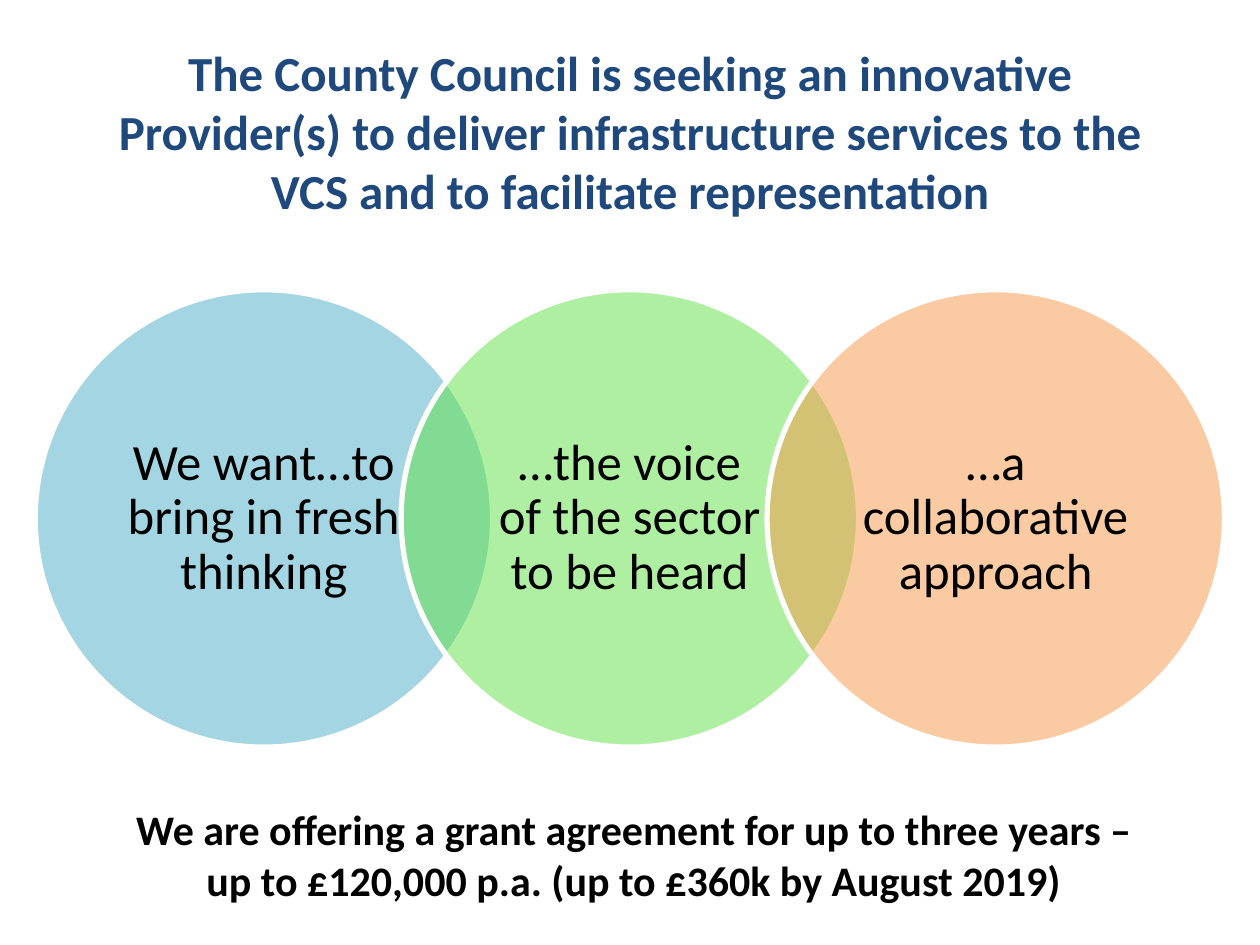
from lxml import etree
from pptx import Presentation
from pptx.dml.color import RGBColor
from pptx.enum.shapes import MSO_SHAPE
from pptx.enum.text import MSO_ANCHOR, MSO_AUTO_SIZE, PP_ALIGN
from pptx.oxml.ns import qn
from pptx.util import Inches, Pt

OVAL = MSO_SHAPE.OVAL
CENTER = PP_ALIGN.CENTER
TOP, MIDDLE = MSO_ANCHOR.TOP, MSO_ANCHOR.MIDDLE
NO_FIT = MSO_AUTO_SIZE.NONE

TITLE = ("The County Council is seeking an innovative Provider(s) to deliver "
         "infrastructure services to the VCS and to facilitate representation")
AIMS = [
    ("We want…to bring in fresh thinking", "4BACC6"),
    ("…the voice of the sector to be heard", "60E146"),
    ("…a collaborative approach", "F79646"),
]
OFFER = ("We are offering a grant agreement for up to three years – "
         "up to £120,000 p.a. (up to £360k by August 2019)")

DIAMETER = 3.63
OVERLAP = 0.2
LEFT, TOP_EDGE = 0.28, 2.3


def rgb(color):
    return RGBColor.from_string(color)


def place(sp, left, top, width, height):
    sp.left, sp.top = Inches(left), Inches(top)
    sp.width, sp.height = Inches(width), Inches(height)


def write(sp, text, size, color="000000", bold=False, anchor=TOP):
    tf = sp.text_frame
    tf.word_wrap = True
    tf.auto_size = NO_FIT
    tf.vertical_anchor = anchor
    tf.text = text
    p = tf.paragraphs[0]
    p.alignment = CENTER
    p.font.name = "Calibri"
    p.font.size = Pt(size)
    p.font.bold = bold
    p.font.color.rgb = rgb(color)
    return tf


def add_circle(s, index, text, color):
    left = LEFT + index * DIAMETER * (1 - OVERLAP)
    sp = s.shapes.add_shape(OVAL, Inches(left), Inches(TOP_EDGE),
                            Inches(DIAMETER), Inches(DIAMETER))
    sp.shadow.inherit = False
    sp.fill.solid()
    sp.fill.fore_color.rgb = rgb(color)
    fill = sp.fill._xPr.find(qn("a:solidFill"))
    etree.SubElement(fill[0], qn("a:alpha"), val="50000")
    sp.line.color.rgb = rgb("FFFFFF")
    sp.line.width = Pt(3)
    tf = write(sp, text, 29, anchor=MIDDLE)
    tf.margin_left = tf.margin_right = Inches(0.2)
    tf.margin_top = tf.margin_bottom = Inches(0.04)
    tf.paragraphs[0].line_spacing = 0.9


def main():
    prs = Presentation()
    prs.slide_width, prs.slide_height = Inches(10), Inches(7.5)
    s = prs.slides.add_slide(prs.slide_layouts[5])

    title = s.shapes.title
    place(title, 0.75, 0.29, 8.5, 1.51)
    write(title, TITLE, 28, "1F497D", bold=True)

    for index, (text, color) in enumerate(AIMS):
        add_circle(s, index, text, color)

    offer = s.shapes.add_textbox(0, 0, 0, 0)
    place(offer, 0.78, 6.33, 8.5, 0.91)
    write(offer, OFFER, 24, bold=True)

    prs.save("out.pptx")


if __name__ == "__main__":
    main()
